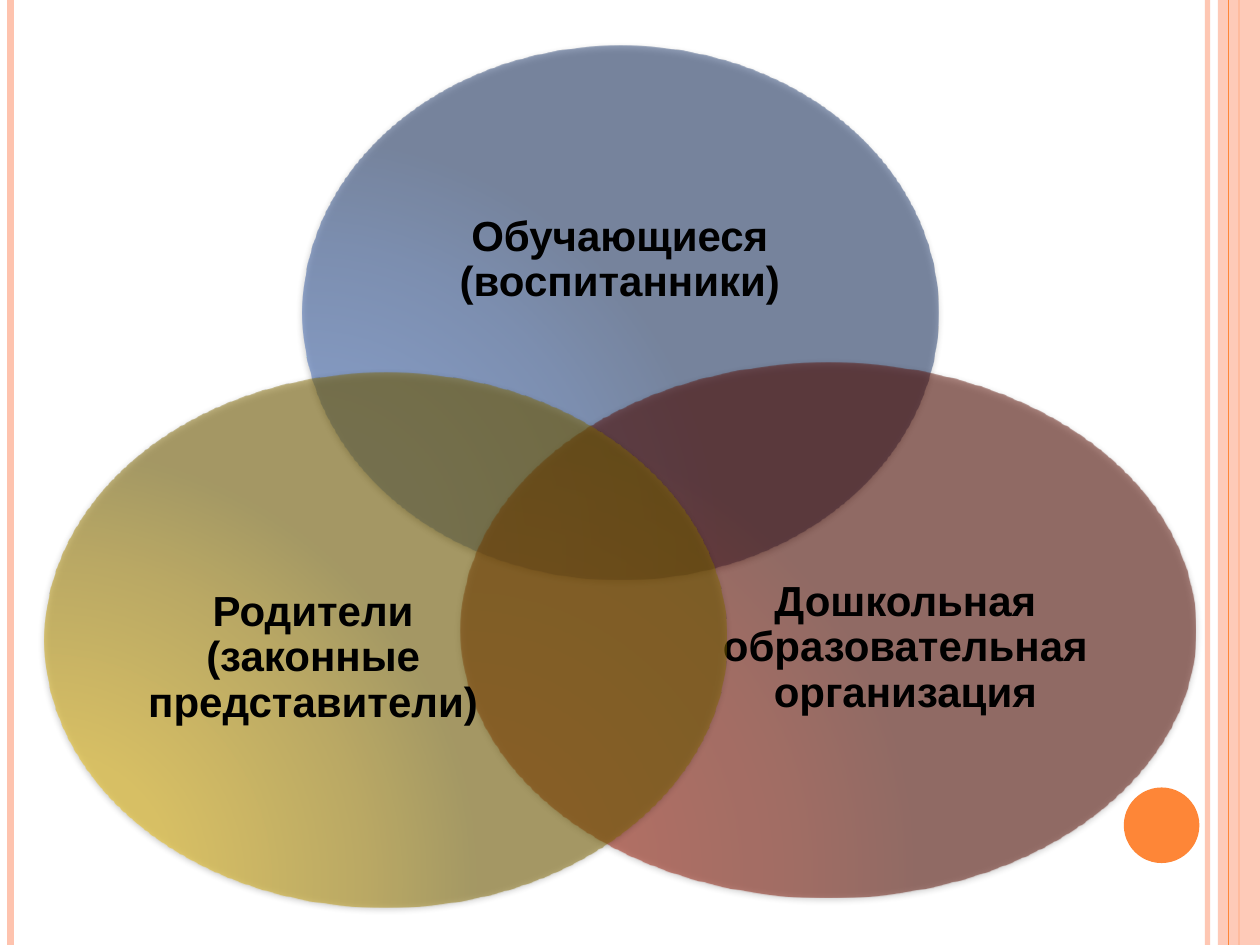
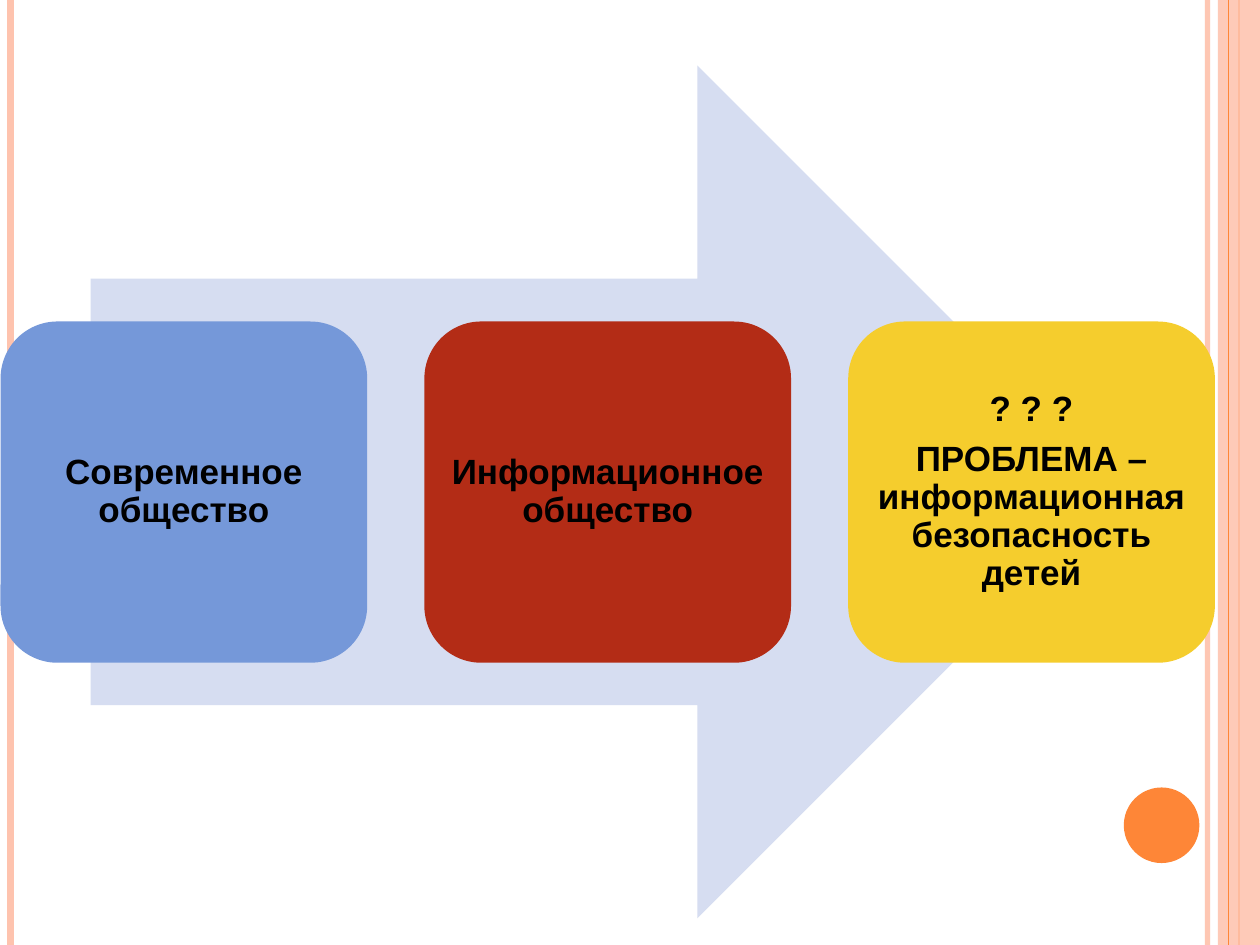
from lxml import etree
from pptx import Presentation
from pptx.dml.color import RGBColor
from pptx.enum import shapes, text
from pptx.oxml import ns, parse_xml
from pptx.util import Pt

COLORS = {
    "peach": "FEC3AE",
    "orange": "FE8637",
    "black": "000000",
    "arrow": "D6DDF1",
    "blue": "7598D9",
    "red": "B32C16",
    "yellow": "F5CD2D",
}
GRADIENTS = {
    "blue": ("4574CC", "4370C5", "2F5397", "233E70"),
    "red": ("A41700", "9F1600", "771100", "580C00"),
    "yellow": ("EDBE00", "E5B700", "AC8900", "7F6600"),
}
STOPS = (0, 30, 75, 100)
FONT = "Arial"
WIDTH, HEIGHT = 720, 540
OVAL = shapes.MSO_SHAPE.OVAL


class Deck:
    def __init__(self):
        self.prs = Presentation()
        self.prs.slide_width, self.prs.slide_height = Pt(WIDTH), Pt(HEIGHT)

    def new_slide(self):
        self.s = self.prs.slides.add_slide(self.prs.slide_layouts[6])
        self.rule(690, "peach", 3, 93)
        self.rule(6, "peach", 4.5)
        self.rule(708, "orange", 1.5)
        band = self.shape(shapes.MSO_SHAPE.RECTANGLE, (696, 0, 24, HEIGHT), "peach")
        self.alpha(band, 87)
        self.rule(702, "orange", 0.75)
        self.shape(OVAL, (642.2, 450, 43.2, 43.2), "orange")

    def alpha(self, sp, percent):
        clr = sp._element.spPr.find(".//" + ns.qn("a:srgbClr"))
        etree.SubElement(clr, ns.qn("a:alpha"), val=str(percent * 1000))

    def rule(self, x, color, width, opacity=100):
        c = self.s.shapes.add_connector(
            shapes.MSO_CONNECTOR.STRAIGHT, Pt(x), Pt(0), Pt(x), Pt(HEIGHT))
        c.line.color.rgb = RGBColor.from_string(COLORS[color])
        c.line.width = Pt(width)
        etree.SubElement(c._element.spPr, ns.qn("a:effectLst"))
        if opacity < 100:
            self.alpha(c, opacity)

    def shape(self, kind, box, color):
        sp = self.s.shapes.add_shape(kind, *map(Pt, box))
        sp.fill.solid()
        sp.fill.fore_color.rgb = RGBColor.from_string(COLORS[color])
        sp.line.fill.background()
        sp.shadow.inherit = False
        return sp

    def venn_oval(self, box, color):
        sp = self.shape(OVAL, box, color)
        stops = "".join(
            f'<a:gs pos="{pos * 1000}"><a:srgbClr val="{c}"><a:alpha val="50000"/></a:srgbClr></a:gs>'
            for pos, c in zip(STOPS, GRADIENTS[color]))
        grad = parse_xml(
            f'<a:gradFill {ns.nsdecls("a")} rotWithShape="1"><a:gsLst>{stops}</a:gsLst>'
            '<a:path path="circle"><a:fillToRect l="5000" t="100000" r="120000" b="10000"/>'
            '</a:path></a:gradFill>')
        spPr = sp._element.spPr
        spPr.replace(spPr.find(ns.qn("a:solidFill")), grad)
        spPr.find(ns.qn("a:effectLst")).append(parse_xml(
            f'<a:outerShdw {ns.nsdecls("a")} blurRad="{Pt(4)}" dist="{Pt(1.6)}" dir="5400000" '
            f'rotWithShape="0"><a:srgbClr val="{COLORS["black"]}"><a:alpha val="42000"/>'
            '</a:srgbClr></a:outerShdw>'))

    def label(self, box, content, size):
        self.fill_text(self.s.shapes.add_textbox(*map(Pt, box)), content, size)

    def fill_text(self, sp, content, size):
        tf = sp.text_frame
        frame = {"word_wrap": True, "vertical_anchor": text.MSO_ANCHOR.MIDDLE,
                 "margin_left": 0, "margin_right": 0, "margin_top": 0, "margin_bottom": 0}
        para = {"alignment": text.PP_ALIGN.CENTER, "line_spacing": 0.9,
                "space_after": Pt(size * 0.35)}
        font = {"name": FONT, "size": Pt(size), "bold": True}
        self.apply(tf, frame)
        tf.text = content
        for p in tf.paragraphs:
            self.apply(p, para)
            for r in p.runs:
                self.apply(r.font, font)
                r.font.color.rgb = RGBColor.from_string(COLORS["black"])

    def apply(self, target, values):
        for name, value in values.items():
            setattr(target, name, value)


def participants(deck):
    deck.new_slide()
    circles = [
        ("blue", (172.8, 25.9, 363.6, 305.3), (221, 79.9, 266.4, 137.5),
         "Обучающиеся (воспитанники)"),
        ("red", (263.5, 207.4, 419.8, 305.3), (391.7, 286.6, 251.3, 167.8),
         "Дошкольная образовательная организация"),
        ("yellow", (25.2, 213.1, 390.2, 305.3), (61.9, 292.3, 234, 167.8),
         "Родители (законные представители)"),
    ]
    for color, oval_box, label_box, content in circles:
        deck.venn_oval(oval_box, color)
        deck.label(label_box, content, 24)


def problem(deck):
    deck.new_slide()
    deck.shape(shapes.MSO_SHAPE.RIGHT_ARROW, (51.8, 37.4, 590.4, 487.4), "arrow")
    steps = [
        ("blue", "Современное общество"),
        ("red", "Информационное общество"),
        ("yellow", "? ? ?\nПРОБЛЕМА – информационная безопасность детей"),
    ]
    card_width, gap = 209.5, 32.7
    for i, (color, content) in enumerate(steps):
        box = (0.3 + i * (card_width + gap), 183.7, card_width, 195)
        card = deck.shape(shapes.MSO_SHAPE.ROUNDED_RECTANGLE, box, color)
        deck.fill_text(card, content, 20)


def main():
    deck = Deck()
    participants(deck)
    problem(deck)
    deck.prs.save("out.pptx")


if __name__ == "__main__":
    main()
